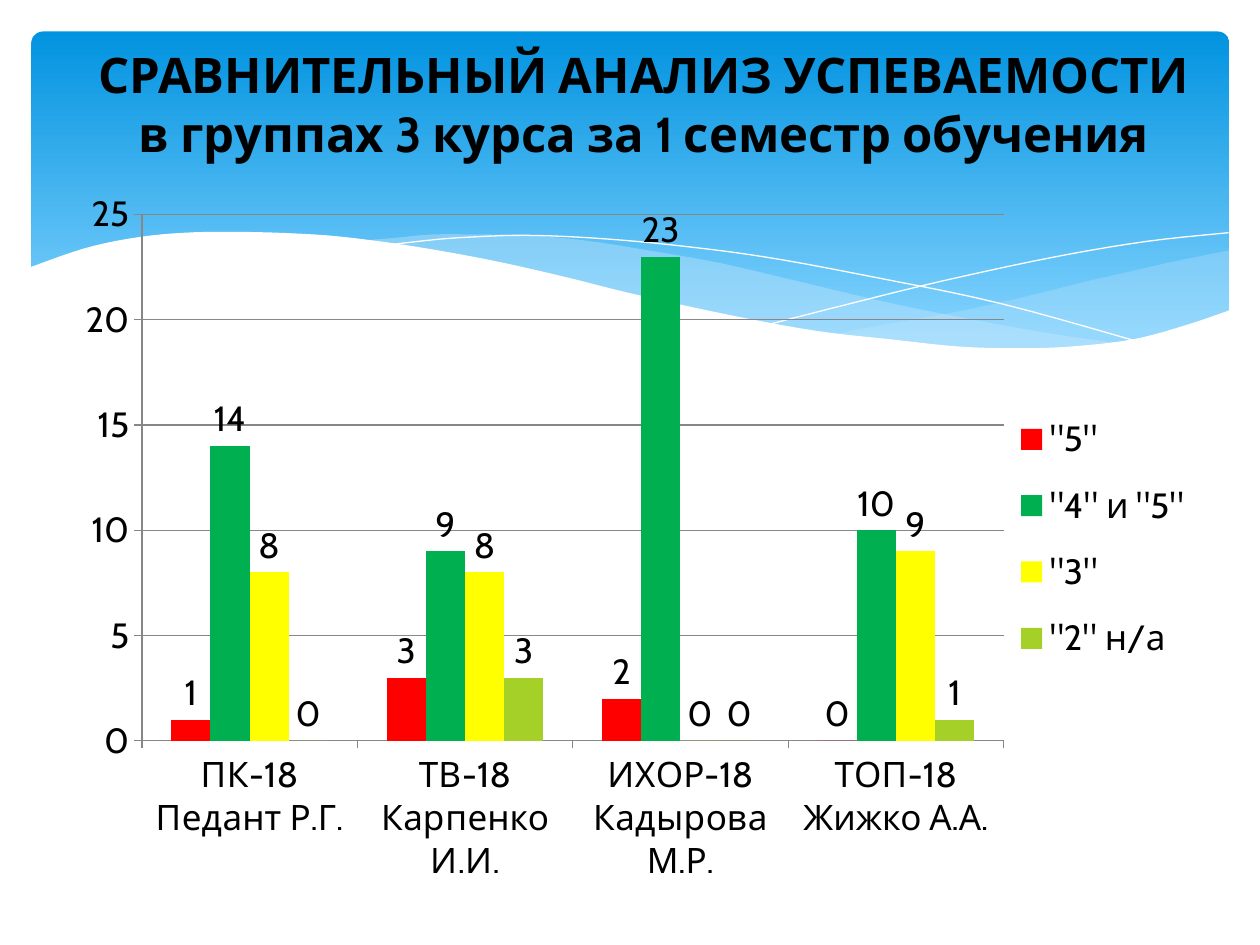
from lxml import etree
from pptx import Presentation
from pptx.chart.data import CategoryChartData
from pptx.dml.color import RGBColor
from pptx.enum.chart import XL_CHART_TYPE, XL_LABEL_POSITION, XL_LEGEND_POSITION, XL_TICK_MARK
from pptx.enum.shapes import MSO_SHAPE
from pptx.enum.text import MSO_ANCHOR, MSO_AUTO_SIZE, PP_ALIGN
from pptx.oxml import parse_xml
from pptx.oxml.ns import qn
from pptx.util import Pt

COLUMN = XL_CHART_TYPE.COLUMN_CLUSTERED
ABOVE = XL_LABEL_POSITION.OUTSIDE_END
RIGHT = XL_LEGEND_POSITION.RIGHT
OUT = XL_TICK_MARK.OUTSIDE
ROUND = MSO_SHAPE.ROUNDED_RECTANGLE
FONT = "Cabin"
C_NS = "http://schemas.openxmlformats.org/drawingml/2006/chart"

# Content
TITLE = "СРАВНИТЕЛЬНЫЙ АНАЛИЗ УСПЕВАЕМОСТИ\vв группах 3 курса за 1 семестр обучения"
GROUPS = ["ПК-18 Педант Р.Г.", "ТВ-18 Карпенко И.И.",
          "ИХОР-18 Кадырова М.Р.", "ТОП-18 Жижко А.А."]
MARKS = [
    ('"5"', (1, 3, 2, 0), "FF0000"),
    ('"4" и "5"', (14, 9, 23, 10), "00B050"),
    ('"3"', (8, 8, 0, 9), "FFFF00"),
    ('"2" н/а', (0, 3, 0, 1), "A5D028"),
]

# Waves: each is a list of smooth curves given by their knots, in points
EAST = [
    [(702.5, 143), (673, 149), (642, 156), (620, 161), (580, 171),
     (542, 179), (508, 185), (476, 191)],
    [(476, 191), (508, 195), (536, 198), (562, 199.5), (586, 200),
     (615, 199), (640, 196.5), (663, 191), (683, 185), (702.5, 178)],
]
MID = [
    [(643, 196.5), (603, 191), (558, 183), (508, 173), (453, 160), (410, 150),
     (370, 143), (335, 137.5), (302, 134.5), (274, 134), (247, 134),
     (225, 136), (206, 137.5)],
    [(206, 137.5), (246, 143), (291, 152), (323, 160), (382, 173), (433, 184),
     (479, 191.5), (520, 197), (557, 200), (589, 200), (617, 199.5),
     (643, 196.5)],
]
FALL = [[(222, 140), (248, 137), (269, 135.5), (300, 134.5), (338, 136),
         (384, 140), (438, 147), (500, 158.5), (572, 173.5), (653, 196)]]
RISE = [[(441, 185), (484, 174), (539, 160.5), (602, 147), (655, 138),
         (702, 133)]]
FRONT = [
    [(703.5, 177), (677, 186), (647, 194), (612, 198), (582, 199), (548, 198),
     (510, 194), (466, 189), (417, 180), (362, 168), (322, 158), (282, 149),
     (244, 142), (210, 137), (180, 134), (139, 132.5), (105, 133), (76, 136),
     (48, 142), (16.5, 153)],
    [(16.5, 237), (703.5, 237)],
]
# knots, fill, opacity in percent; no fill means a thin white line
WAVES = [(EAST, "C6E7FC", 29), (MID, "C6E7FC", 40), (FALL, None, 100),
         (RISE, None, 100), (FRONT, "FFFFFF", 100)]


def rgb(code):
    return RGBColor.from_string(code)


def smooth(knots, steps=5):
    """Catmull-Rom curve through the knots."""
    ends = [knots[0], *knots, knots[-1]]
    dots = [knots[0]]
    for a, b, c, d in zip(ends, ends[1:], ends[2:], ends[3:]):
        for i in range(1, steps + 1):
            t = i / steps
            dots.append(tuple(
                q + t / 2 * (r - p + t * (2 * p - 5 * q + 4 * r - s
                                          + t * (3 * (q - r) + s - p)))
                for p, q, r, s in zip(a, b, c, d)))
    return dots


def add_wave(shapes, curves, color, alpha):
    dots = [(Pt(x), Pt(y)) for knots in curves for x, y in smooth(knots)]
    pen = shapes.build_freeform(*dots[0])
    pen.add_line_segments(dots[1:], close=color is not None)
    wave = pen.convert_to_shape()
    wave.shadow.inherit = False
    if color is None:
        wave.fill.background()
        wave.line.color.rgb = rgb("FFFFFF")
        wave.line.width = Pt(0)
        return
    wave.line.fill.background()
    wave.fill.solid()
    wave.fill.fore_color.rgb = rgb(color)
    if alpha < 100:
        tint = wave.element.spPr.find(".//" + qn("a:srgbClr"))
        etree.SubElement(tint, qn("a:alpha"), val=str(alpha * 1000))


def layout(x, y, w, h, inner=False):
    """Fixed place inside the chart, as shares of its size."""
    target = '<c:layoutTarget val="inner"/>' if inner else ""
    modes = "".join(f'<c:{k}Mode val="edge"/>' for k in "xy")
    sizes = "".join(f'<c:{k} val="{v}"/>' for k, v in zip("xywh", (x, y, w, h)))
    return parse_xml(f'<c:layout xmlns:c="{C_NS}"><c:manualLayout>'
                     f'{target}{modes}{sizes}</c:manualLayout></c:layout>')


def place(part, box):
    for old in part.findall(qn("c:layout")):
        part.remove(old)
    pos = part.find(qn("c:legendPos"))
    if pos is None:
        part.insert(0, box)
    else:
        pos.addnext(box)


deck = Presentation()
deck.slide_width, deck.slide_height = Pt(720), Pt(540)
slide = deck.slides.add_slide(deck.slide_layouts[5])
shapes = slide.shapes
title = shapes.title

# Blue panel and waves
panel = shapes.add_shape(ROUND, Pt(18), Pt(18), Pt(684.5), Pt(194.5))
panel.adjustments[0] = 0.034
panel.shadow.inherit = False
panel.line.fill.background()
panel.fill.gradient()
panel.fill.gradient_angle = 270
for stop, spot, color in zip(panel.fill.gradient_stops, (0, 0.9), ("0293E0", "83D3FE")):
    stop.position = spot
    stop.color.rgb = rgb(color)
for wave in WAVES:
    add_wave(shapes, *wave)

# Title, brought in front of the waves
title.element.getparent().append(title.element)
title.left, title.top, title.width, title.height = Pt(36.5), Pt(26), Pt(663), Pt(98.5)
frame = title.text_frame
frame.text = TITLE
frame.word_wrap = True
frame.auto_size = MSO_AUTO_SIZE.NONE
frame.vertical_anchor = MSO_ANCHOR.MIDDLE
frame.margin_bottom = Pt(36)
head = frame.paragraphs[0]
head.alignment = PP_ALIGN.CENTER
head.font.name, head.font.size, head.font.bold = FONT, Pt(28), True
head.font.color.rgb = rgb("000000")

# Chart
data = CategoryChartData(number_format="0")
data.categories = GROUPS
for name, vals, _ in MARKS:
    data.add_series(name, vals)
chart = shapes.add_chart(COLUMN, Pt(34.5), Pt(102), Pt(665.5), Pt(412), data).chart
chart.has_title = False
chart.font.name, chart.font.size = FONT, Pt(20)
chart.font.color.rgb = rgb("000000")
chart.has_legend = True
chart.legend.position = RIGHT
chart.legend.include_in_layout = False

plot = chart.plots[0]
plot.gap_width, plot.overlap, plot.vary_by_categories = 150, 0, False
for row, (_, _, color) in zip(plot.series, MARKS):
    row.format.fill.solid()
    row.format.fill.fore_color.rgb = rgb(color)
    row.invert_if_negative = False
    tags = row.data_labels
    tags.show_value = True
    tags.number_format, tags.number_format_is_linked = "0", False
    tags.position = ABOVE

# Axes
values = chart.value_axis
values.minimum_scale, values.maximum_scale, values.major_unit = 0, 25, 5
values.has_major_gridlines = True
values.tick_labels.number_format = "0"
values.tick_labels.number_format_is_linked = False
for axis in (values, chart.category_axis):
    axis.major_tick_mark = OUT
for rule in (values, chart.category_axis, values.major_gridlines):
    rule.format.line.color.rgb = rgb("878787")
    rule.format.line.width = Pt(0.75)

place(chart.element.find(".//" + qn("c:plotArea")), layout(0.07, 0.05, 0.74, 0.73, True))
place(chart.legend.element if hasattr(chart.legend, "element")
      else chart.element.find(".//" + qn("c:legend")), layout(0.8, 0.3, 0.19, 0.4))

deck.save("out.pptx")
